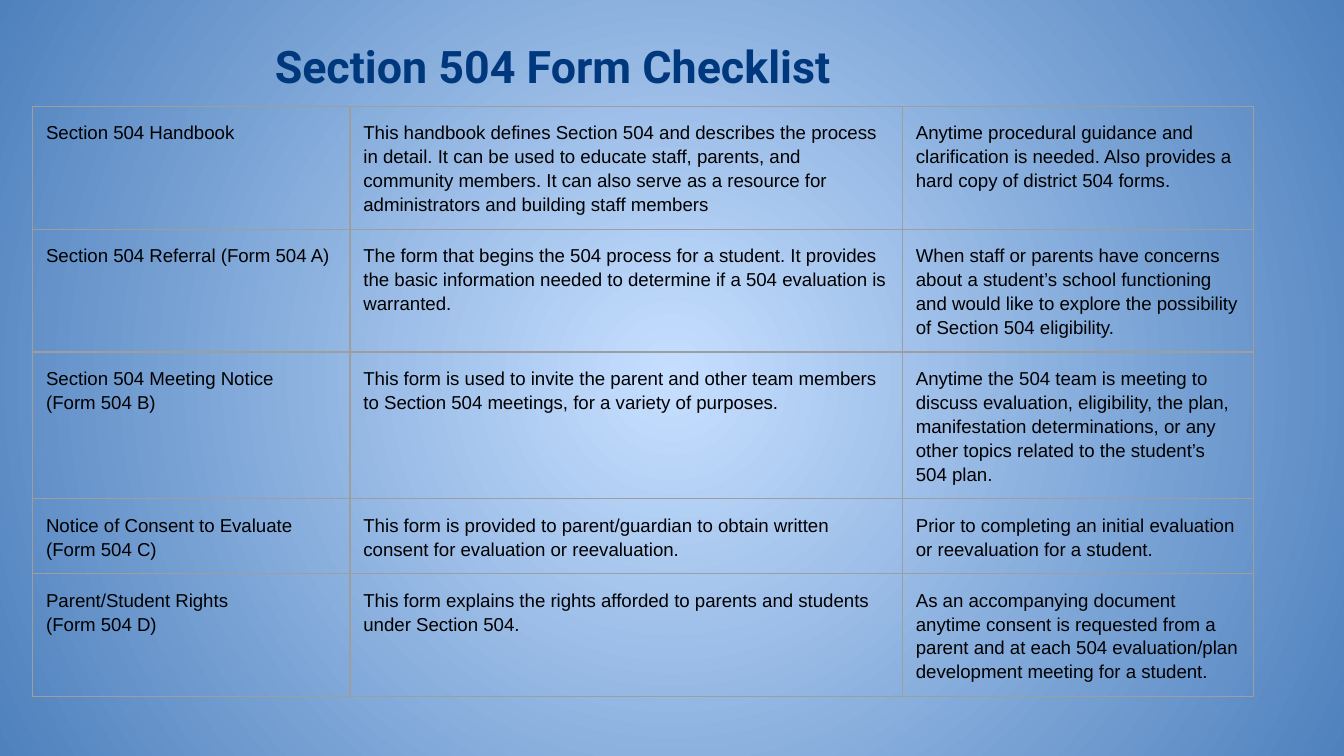
from lxml.etree import SubElement
from pptx import Presentation
from pptx.dml.color import RGBColor
from pptx.enum.text import MSO_ANCHOR as Anchor, MSO_AUTO_SIZE as AutoSize, PP_ALIGN as Align
from pptx.oxml import parse_xml
from pptx.oxml.ns import nsdecls, qn
from pptx.util import Pt

TITLE_ONLY = 5
COLUMN_WIDTHS = [170, 41, 255, 188]
ROW_HEIGHTS = [65.5, 65.5, 78.5, 40, 65.5]

# Each row: form name, what it is, when to use it
FORMS = [
    ("Section 504 Handbook",
     "This handbook defines Section 504 and describes the process in detail. It can be used to "
     "educate staff, parents, and community members. It can also serve as a resource for "
     "administrators and building staff members",
     "Anytime procedural guidance and clarification is needed. Also provides a hard copy of "
     "district 504 forms."),
    ("Section 504 Referral (Form 504 A)",
     "The form that begins the 504 process for a student. It provides the basic information "
     "needed to determine if a 504 evaluation is warranted.",
     "When staff or parents have concerns about a student’s school functioning and would like "
     "to explore the possibility of Section 504 eligibility."),
    ("Section 504 Meeting Notice\n(Form 504 B)",
     "This form is used to invite the parent and other team members to Section 504 meetings, "
     "for a variety of purposes.",
     "Anytime the 504 team is meeting to discuss evaluation, eligibility, the plan, "
     "manifestation determinations, or any other topics related to the student’s 504 plan."),
    ("Notice of Consent to Evaluate (Form 504 C)",
     "This form is provided to parent/guardian to obtain written consent for evaluation or "
     "reevaluation.",
     "Prior to completing an initial evaluation or reevaluation for a student."),
    ("Parent/Student Rights\n(Form 504 D)",
     "This form explains the rights afforded to parents and students under Section 504.",
     "As an accompanying document anytime consent is requested from a parent and at each 504 "
     "evaluation/plan development meeting for a student."),
]


def color(hex_string):
    return RGBColor.from_string(hex_string)


class ChecklistSlide:
    heading_font, body_font = "Roboto", "Arial"
    heading_color, text_color, border_color = "00387E", "000000", "9E9E9E"
    glow = ["C6DFFF", "4F81BD"]
    inset = Pt(7.2)

    def __init__(self, deck):
        self.slide = deck.slides.add_slide(deck.slide_layouts[TITLE_ONLY])

    def background(self):
        """Radial gradient from the middle of the slide outwards."""
        fill = self.slide.background.fill
        fill.gradient()
        for stop, shade in zip(fill.gradient_stops, self.glow):
            stop.color.rgb = color(shade)
        linear = self.slide.element.find(".//" + qn("a:lin"))
        radial = parse_xml(f'<a:path {nsdecls("a")} path="circle"/>')
        SubElement(radial, qn("a:fillToRect"), l="50000", t="50000", r="50000", b="50000")
        linear.getparent().replace(linear, radial)

    def run(self, paragraph, text, font, size, shade, bold=False):
        run = paragraph.add_run()
        run.text = text
        run.font.name, run.font.size, run.font.bold = font, Pt(size), bold
        run.font.color.rgb = color(shade)

    def title(self, text, left, top, width, height):
        heading = self.slide.shapes.title
        heading.left, heading.top = Pt(left), Pt(top)
        heading.width, heading.height = Pt(width), Pt(height)
        frame = heading.text_frame
        frame.auto_size, frame.word_wrap = AutoSize.NONE, True
        frame.vertical_anchor = Anchor.BOTTOM
        frame.margin_left = frame.margin_right = self.inset
        frame.margin_top = frame.margin_bottom = 0
        line = frame.paragraphs[0]
        line.alignment = Align.LEFT
        self.run(line, text, self.heading_font, 24, self.heading_color, bold=True)

    def borders(self, cell):
        properties = cell._tc.get_or_add_tcPr()
        for position, side in enumerate(("lnL", "lnR", "lnT", "lnB")):
            properties.insert(position, parse_xml(
                f'<a:{side} {nsdecls("a")} w="{Pt(0.75)}"><a:solidFill>'
                f'<a:srgbClr val="{self.border_color}"/></a:solidFill></a:{side}>'))

    def write_cell(self, cell, text):
        cell.margin_left = cell.margin_right = self.inset
        cell.margin_top = cell.margin_bottom = self.inset
        frame = cell.text_frame
        for index, line in enumerate(text.split("\n")):
            paragraph = frame.add_paragraph() if index else frame.paragraphs[0]
            paragraph.line_spacing = 1.15
            self.run(paragraph, line, self.body_font, 10, self.text_color)

    def table(self, forms, left, top):
        table = self.slide.shapes.add_table(
            len(forms), len(COLUMN_WIDTHS), Pt(left), Pt(top),
            Pt(sum(COLUMN_WIDTHS)), Pt(sum(ROW_HEIGHTS))).table
        table.first_row = table.horz_banding = False
        for column, width in zip(table.columns, COLUMN_WIDTHS):
            column.width = Pt(width)
        for row, height in zip(table.rows, ROW_HEIGHTS):
            row.height = Pt(height)
        for cell in table.iter_cells():
            cell.fill.background()
            self.borders(cell)
        for row, (form, purpose, occasion) in enumerate(forms):
            table.cell(row, 1).merge(table.cell(row, 2))
            for column, text in ((0, form), (1, purpose), (3, occasion)):
                self.write_cell(table.cell(row, column), text)


def main():
    deck = Presentation()
    deck.slide_width, deck.slide_height = Pt(720), Pt(405)
    checklist = ChecklistSlide(deck)
    checklist.background()
    checklist.table(FORMS, left=17.5, top=57)
    checklist.title("Section 504 Form Checklist", left=140, top=9.5, width=450, height=40)
    deck.save("out.pptx")


if __name__ == "__main__":
    main()
